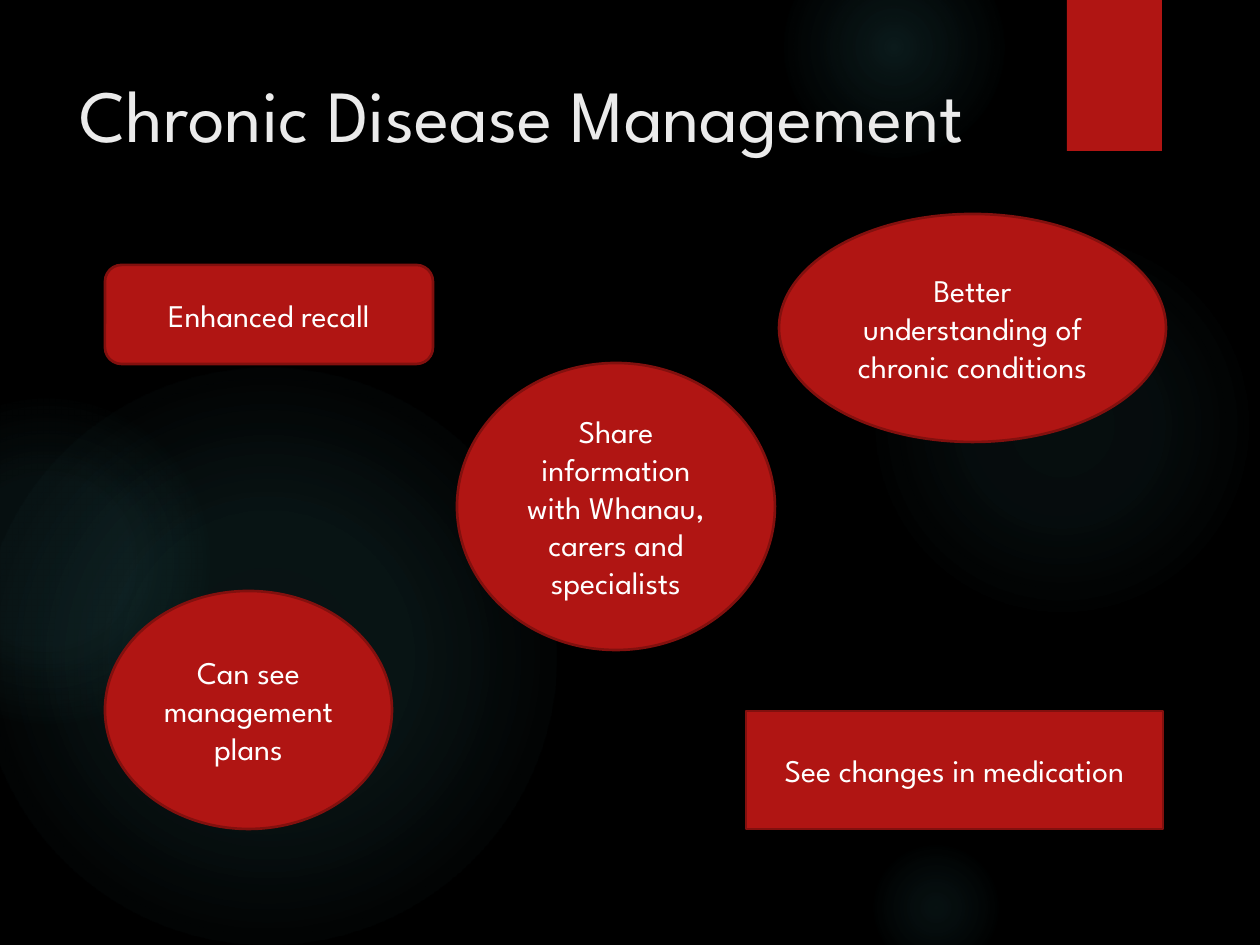
from dataclasses import dataclass

from pptx import Presentation, oxml, util as u
from pptx.dml.color import RGBColor
from pptx.enum import shapes, text
from pptx.oxml.ns import nsdecls

EMU_PER_PX = 914400 / 126
SHAPE = shapes.MSO_SHAPE


@dataclass(frozen=True)
class Theme:
    """Colours and type sizes of the slide."""
    font: str = "League Spartan"
    background: str = "000000"
    glow: str = "50B9C1"
    accent: str = "B01513"
    outline: str = "82100E"
    title: str = "EBEBEB"
    label: str = "FFFFFF"
    title_size: int = 42
    label_size: int = 18
    outline_width: float = 1.5


THEME = Theme()

GLOWS = [
    (868, 231, 388, ((0, 7), (36, 6), (69, 0))),
    (784, -63, 220, ((0, 14), (36, 7), (73, 0))),
    (868, 840, 136, ((0, 9), (36, 5), (66, 0))),
    (-21, 368, 577, ((0, 11), (36, 10), (75, 0))),
    (-116, 399, 325, ((0, 8), (36, 8), (72, 0))),
]

BENEFITS = [
    (SHAPE.ROUNDED_RECTANGLE, (105, 265, 328, 99), "Enhanced recall"),
    (SHAPE.OVAL, (779, 214, 387, 228), "Better understanding of chronic conditions"),
    (SHAPE.RECTANGLE, (746, 711, 417, 118), "See changes in medication"),
    (SHAPE.OVAL, (105, 591, 287, 238), "Can see management plans"),
    (SHAPE.OVAL, (457, 363, 318, 287),
     "Share information with Whanau, carers and specialists"),
]


def px(length):
    """Turn pixels into EMU."""
    return u.Emu(round(length * EMU_PER_PX))


def rgb(code):
    """Turn a hex code into a colour."""
    return RGBColor.from_string(code)


def write(frame, words, size, colour, align, anchor):
    """Put one formatted paragraph into a text frame."""
    frame.text = words
    frame.word_wrap = True
    frame.vertical_anchor = anchor
    paragraph = frame.paragraphs[0]
    paragraph.alignment = align
    font = paragraph.runs[0].font
    font.name, font.size = THEME.font, u.Pt(size)
    font.color.rgb = rgb(colour)


def add_plain(slide, preset, box):
    """Add a preset shape without shadow or outline."""
    shape = slide.shapes.add_shape(preset, *map(px, box))
    shape.shadow.inherit = False
    shape.line.fill.background()
    return shape


def add_glow(slide, left, top, size, stops):
    """Add a round glow that fades out from its centre."""
    glow = add_plain(slide, SHAPE.OVAL, (left, top, size, size))
    stop_xml = "".join(
        f'<a:gs pos="{position * 1000}"><a:srgbClr val="{THEME.glow}">'
        f'<a:alpha val="{opacity * 1000}"/></a:srgbClr></a:gs>'
        for position, opacity in stops)
    glow.element.spPr.insert(2, oxml.parse_xml(
        f'<a:gradFill {nsdecls("a")}><a:gsLst>{stop_xml}</a:gsLst>'
        '<a:path path="circle"><a:fillToRect l="50000" t="50000" r="50000" b="50000"/>'
        '</a:path></a:gradFill>'))


def add_block(slide, preset, box):
    """Add a shape filled with the accent colour."""
    block = add_plain(slide, preset, box)
    block.fill.solid()
    block.fill.fore_color.rgb = rgb(THEME.accent)
    return block


def add_tab(slide):
    """Add the corner tab with its soft shadow."""
    tab = add_block(slide, SHAPE.RECTANGLE, (1067, 0, 95, 151))
    effects = tab.element.spPr.find(oxml.ns.qn("a:effectLst"))
    effects.append(oxml.parse_xml(
        f'<a:outerShdw {nsdecls("a")} blurRad="{u.Pt(3)}" dist="{u.Pt(2)}" dir="5400000">'
        '<a:srgbClr val="000000"><a:alpha val="45000"/></a:srgbClr></a:outerShdw>'))


def place_title(slide, words):
    """Move the title placeholder in front of the backdrop and fill it."""
    title = slide.shapes.title
    title.element.getparent().append(title.element)
    title.left, title.top, title.width, title.height = map(px, (67, 63, 973, 193))
    write(title.text_frame, words, THEME.title_size, THEME.title,
          text.PP_ALIGN.LEFT, text.MSO_ANCHOR.TOP)


def add_benefit(slide, preset, box, words):
    """Add an outlined shape that names one benefit."""
    benefit = add_block(slide, preset, box)
    benefit.line.color.rgb = rgb(THEME.outline)
    benefit.line.width = u.Pt(THEME.outline_width)
    write(benefit.text_frame, words, THEME.label_size, THEME.label,
          text.PP_ALIGN.CENTER, text.MSO_ANCHOR.MIDDLE)


def main():
    """Build and save the slide."""
    deck = Presentation()
    deck.slide_width, deck.slide_height = px(1260), px(945)
    slide = deck.slides.add_slide(deck.slide_layouts.get_by_name("Title Only"))
    slide.background.fill.solid()
    slide.background.fill.fore_color.rgb = rgb(THEME.background)
    for glow in GLOWS:
        add_glow(slide, *glow)
    add_tab(slide)
    place_title(slide, "Chronic Disease Management")
    for benefit in BENEFITS:
        add_benefit(slide, *benefit)
    deck.save("out.pptx")


if __name__ == "__main__":
    main()
